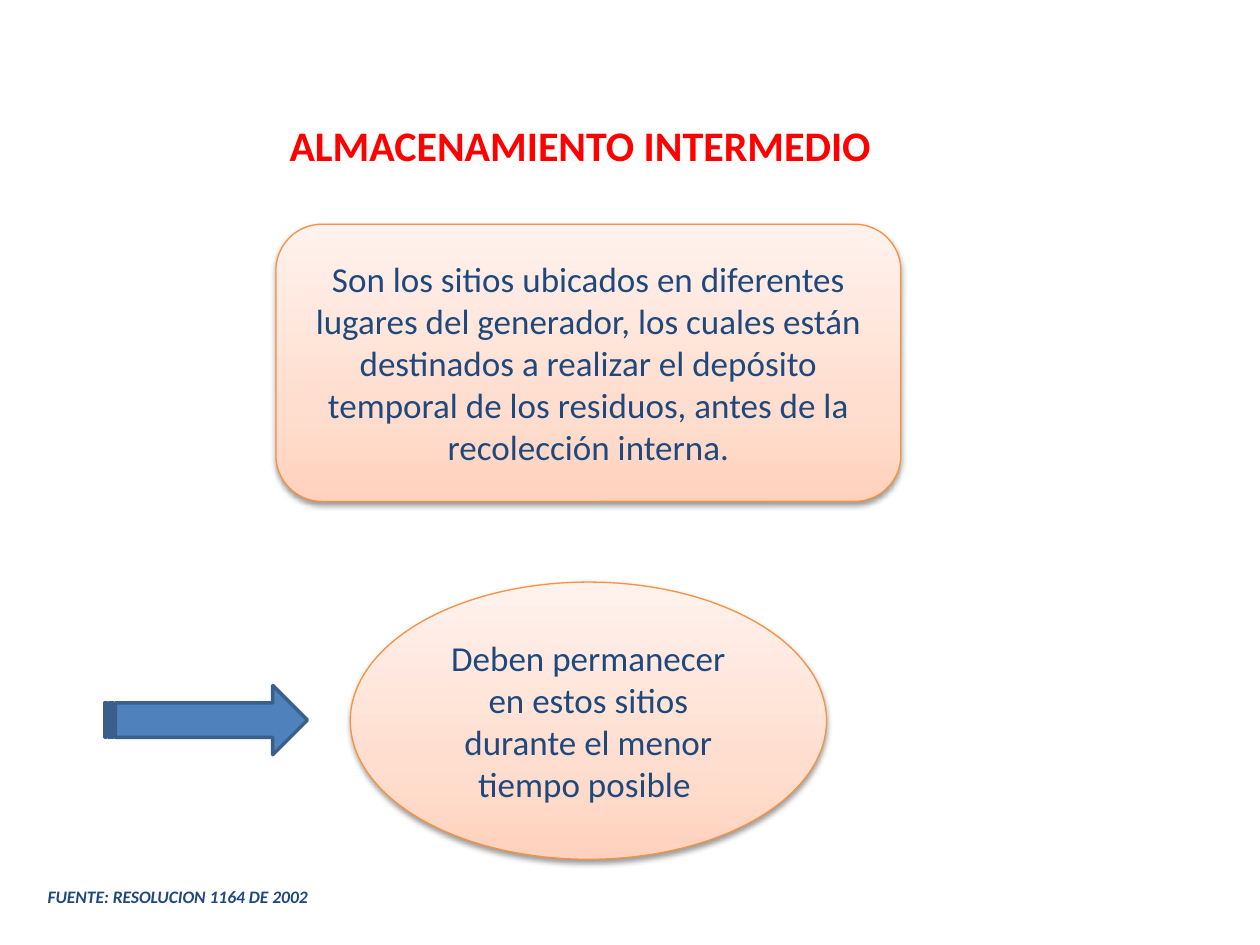
from copy import deepcopy

from lxml.etree import SubElement
from pptx import Presentation
from pptx.dml.color import RGBColor
from pptx.enum.shapes import MSO_SHAPE
from pptx.enum.text import MSO_ANCHOR, MSO_AUTO_SIZE, PP_ALIGN
from pptx.oxml.ns import qn
from pptx.util import Inches, Pt

FONT = "Calibri"
COLORS = {
    "title": "FF0000",
    "text": "1F497D",
    "card_line": "F69240",
    "arrow": "4F81BD",
    "arrow_line": "3A5F8C",
    "shadow": "000000",
}
CARD_GRADIENT = [(0, "FFD2BD"), (0.35, "FFDED0"), (1, "FFF2ED")]


def rgb(name):
    return RGBColor.from_string(COLORS[name])


def set_font(paragraph, size, color, bold=False, italic=False):
    font = paragraph.font
    font.name, font.size = FONT, Pt(size)
    font.bold, font.italic = bold, italic
    font.color.rgb = rgb(color)


def add_label(slide, box, text, size, color, wrap=True, italic=False):
    """Add a bold line of text without fill or outline."""
    text_frame = slide.shapes.add_textbox(*map(Inches, box)).text_frame
    text_frame.word_wrap = wrap
    text_frame.auto_size = MSO_AUTO_SIZE.SHAPE_TO_FIT_TEXT
    text_frame.text = text
    set_font(text_frame.paragraphs[0], size, color, bold=True, italic=italic)


def add_outlined_shape(slide, kind, box, line_color, line_width):
    shape = slide.shapes.add_shape(kind, *map(Inches, box))
    shape.line.color.rgb = rgb(line_color)
    shape.line.width = Pt(line_width)
    shape.shadow.inherit = False
    return shape


def fill_with_gradient(shape):
    shape.fill.gradient()
    shape.fill.gradient_angle = 90
    stop_list = shape.element.spPr.find(qn("a:gradFill")).find(qn("a:gsLst"))
    while len(stop_list) < len(CARD_GRADIENT):
        stop_list.append(deepcopy(stop_list[0]))
    for stop, (position, color) in zip(shape.fill.gradient_stops, CARD_GRADIENT):
        stop.position = position
        stop.color.rgb = RGBColor.from_string(color)


def add_shadow(shape):
    effects = shape.element.spPr.find(qn("a:effectLst"))
    shadow = SubElement(effects, qn("a:outerShdw"), blurRad=str(Pt(3.1)),
                        dist=str(Pt(1.6)), dir="5400000", rotWithShape="0")
    color = SubElement(shadow, qn("a:srgbClr"), val=COLORS["shadow"])
    SubElement(color, qn("a:alpha"), val="38000")


def add_card(slide, kind, box, text):
    """Add a shaded shape with centred text."""
    card = add_outlined_shape(slide, kind, box, "card_line", 0.75)
    fill_with_gradient(card)
    add_shadow(card)
    text_frame = card.text_frame
    text_frame.word_wrap = True
    text_frame.vertical_anchor = MSO_ANCHOR.MIDDLE
    text_frame.text = text
    paragraph = text_frame.paragraphs[0]
    paragraph.alignment = PP_ALIGN.CENTER
    set_font(paragraph, 20, "text")


def add_arrow(slide, box):
    arrow = add_outlined_shape(slide, MSO_SHAPE.STRIPED_RIGHT_ARROW, box,
                               "arrow_line", 2)
    arrow.fill.solid()
    arrow.fill.fore_color.rgb = rgb("arrow")


def main():
    presentation = Presentation()
    presentation.slide_width, presentation.slide_height = Inches(10), Inches(7.5)
    slide = presentation.slides.add_slide(presentation.slide_layouts[6])

    add_label(slide, (2.2, 0.9, 4.86, 0.5), "ALMACENAMIENTO INTERMEDIO",
              24, "title", wrap=False)
    add_card(slide, MSO_SHAPE.ROUNDED_RECTANGLE, (2.19, 1.78, 4.96, 2.2),
             "Son los sitios ubicados en diferentes lugares del generador, "
             "los cuales están destinados a realizar el depósito temporal "
             "de los residuos, antes de la recolección interna.")
    add_card(slide, MSO_SHAPE.OVAL, (2.78, 4.62, 3.78, 2.2),
             "Deben permanecer en estos sitios durante el menor tiempo posible ")
    add_arrow(slide, (0.83, 5.44, 1.61, 0.55))
    add_label(slide, (0.28, 6.98, 5, 0.27), "FUENTE: RESOLUCION 1164 DE 2002",
              10, "text", italic=True)

    presentation.save("out.pptx")


if __name__ == "__main__":
    main()
